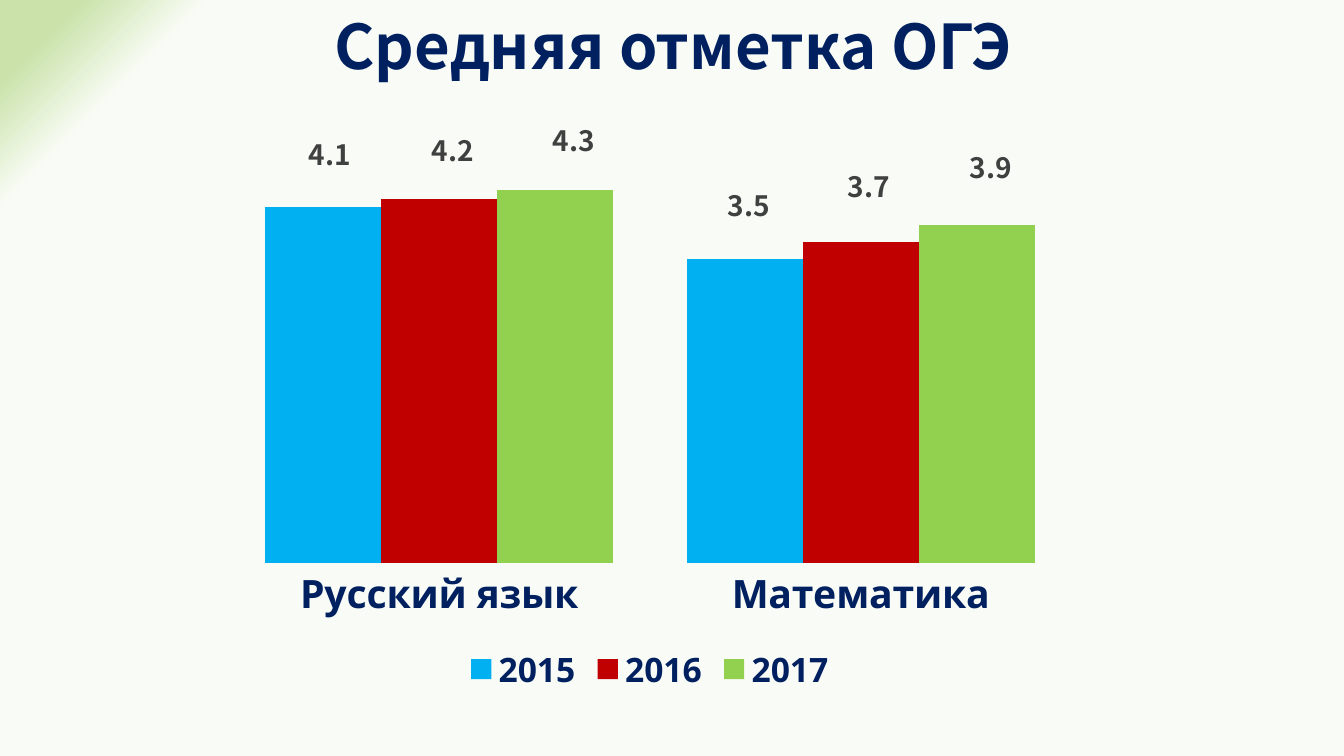
from lxml import etree
from pptx import Presentation
from pptx.chart.data import CategoryChartData
from pptx.dml.color import RGBColor
from pptx.enum import chart as charts, text
from pptx.oxml import parse_xml
from pptx.oxml.ns import nsdecls, qn
from pptx.util import Inches, Pt

COLORS = {
    "navy": "002060",
    "label": "404040",
    "2015": "00B0F0",
    "2016": "C00000",
    "2017": "92D050",
}
BACKGROUND_STOPS = [(90, "F9FCF6"), (96, "CBE3AB"), (100, "CBE3AB"), (100, "DCECC7")]
SUBJECTS = ["Русский язык", "Математика"]
MARKS = {"2015": [4.1, 3.5], "2016": [4.2, 3.7], "2017": [4.3, 3.9]}
# Shift of each value label, in percent of the chart's width and height
LABEL_SHIFTS = {
    "2015": [(0.8, -5.1), (0.5, -5.3)],
    "2016": [(1.6, -4.3), (0.9, -5.5)],
    "2017": [(2.1, -4.5), (1.6, -5.8)],
}


def color(name):
    return RGBColor.from_string(COLORS[name])


def style_font(font, name, size, color_name):
    font.name = name
    font.size = Pt(size)
    font.bold = True
    font.color.rgb = color(color_name)


def set_background(slide):
    """Fill the slide with a radial gradient centred on its far corner."""
    slide.background.fill.solid()
    properties = slide.background._cSld.find(qn("p:bg")).find(qn("p:bgPr"))
    stops = "".join(
        f'<a:gs pos="{position * 1000}"><a:srgbClr val="{value}"/></a:gs>'
        for position, value in BACKGROUND_STOPS
    )
    gradient = parse_xml(
        f'<a:gradFill {nsdecls("a")} rotWithShape="1"><a:gsLst>{stops}</a:gsLst>'
        '<a:path path="circle"><a:fillToRect l="100000" t="100000"/></a:path></a:gradFill>'
    )
    properties.replace(properties.find(qn("a:solidFill")), gradient)


def make_layout(modes, **percents):
    """Return a c:layout element; positions and sizes are percents of the chart."""
    layout = parse_xml(f'<c:layout {nsdecls("c")}><c:manualLayout/></c:layout>')
    shares = {tag: percent / 100 for tag, percent in percents.items()}
    for tag, value in {**modes, **shares}.items():
        etree.SubElement(layout[0], qn(f"c:{tag}")).set("val", str(value))
    return layout


def add_title(slide, wording):
    title = slide.shapes.title
    title.left, title.top = Inches(0.93), Inches(0)
    title.width, title.height = Inches(11.5), Inches(0.98)
    frame = title.text_frame
    frame.text = wording
    frame.vertical_anchor = text.MSO_ANCHOR.MIDDLE
    paragraph = frame.paragraphs[0]
    paragraph.alignment = text.PP_ALIGN.CENTER
    paragraph.line_spacing = 0.9
    style_font(paragraph.font, "Noto Sans CJK KR", 44, "navy")


def style_series(series):
    series.format.fill.solid()
    series.format.fill.fore_color.rgb = color(series.name)
    labels = series.data_labels
    labels.show_value = True
    style_font(labels.font, "Noto Sans CJK SC", 20, "label")
    for leader_lines in labels._element.findall(qn("c:showLeaderLines")):
        leader_lines.set("val", "0")
    for index, (x, y) in enumerate(LABEL_SHIFTS[series.name]):
        label = series.points[index].data_label
        style_font(label.font, "Noto Sans CJK SC", 20, "label")
        label.position = charts.XL_LABEL_POSITION.OUTSIDE_END
        element = labels._element.findall(qn("c:dLbl"))[index]
        element.insert(1, make_layout({}, x=x, y=y))


def style_axes(chart):
    subjects = chart.category_axis
    subjects.major_tick_mark = charts.XL_TICK_MARK.NONE
    subjects.format.line.fill.background()
    style_font(subjects.tick_labels.font, "Open Sans", 28, "navy")
    marks = chart.value_axis
    marks.minimum_scale, marks.maximum_scale = 0, 5
    marks.has_major_gridlines = False
    marks.visible = False


def add_marks_chart(slide):
    data = CategoryChartData(number_format="0.0")
    data.categories = SUBJECTS
    for year, marks in MARKS.items():
        data.add_series(year, marks)
    chart = slide.shapes.add_chart(
        charts.XL_CHART_TYPE.COLUMN_CLUSTERED,
        Inches(2.09), Inches(1.18), Inches(8.71), Inches(5.75), data,
    ).chart
    chart.has_title = False
    chart.font.name = "Calibri"
    chart.font.size = Pt(10)
    plot = chart.plots[0]
    plot.gap_width = 63
    plot.overlap = 0
    plot.vary_by_categories = False
    for series in plot.series:
        style_series(series)
    style_axes(chart)
    chart.has_legend = True
    chart.legend.position = charts.XL_LEGEND_POSITION.BOTTOM
    chart.legend.include_in_layout = False
    style_font(chart.legend.font, "Open Sans", 24, "navy")

    plot_area = chart._chartSpace.chart.plotArea
    for layout in plot_area.findall(qn("c:layout")):
        plot_area.remove(layout)
    modes = {"layoutTarget": "inner", "xMode": "edge", "yMode": "edge"}
    plot_area.insert(0, make_layout(modes, x=2.03, y=1.6, w=96, h=75))


def main():
    presentation = Presentation()
    presentation.slide_width = Inches(13.33)
    presentation.slide_height = Inches(7.5)
    slide = presentation.slides.add_slide(presentation.slide_layouts[5])
    set_background(slide)
    add_title(slide, "Средняя отметка ОГЭ")
    add_marks_chart(slide)
    presentation.save("out.pptx")


if __name__ == "__main__":
    main()
